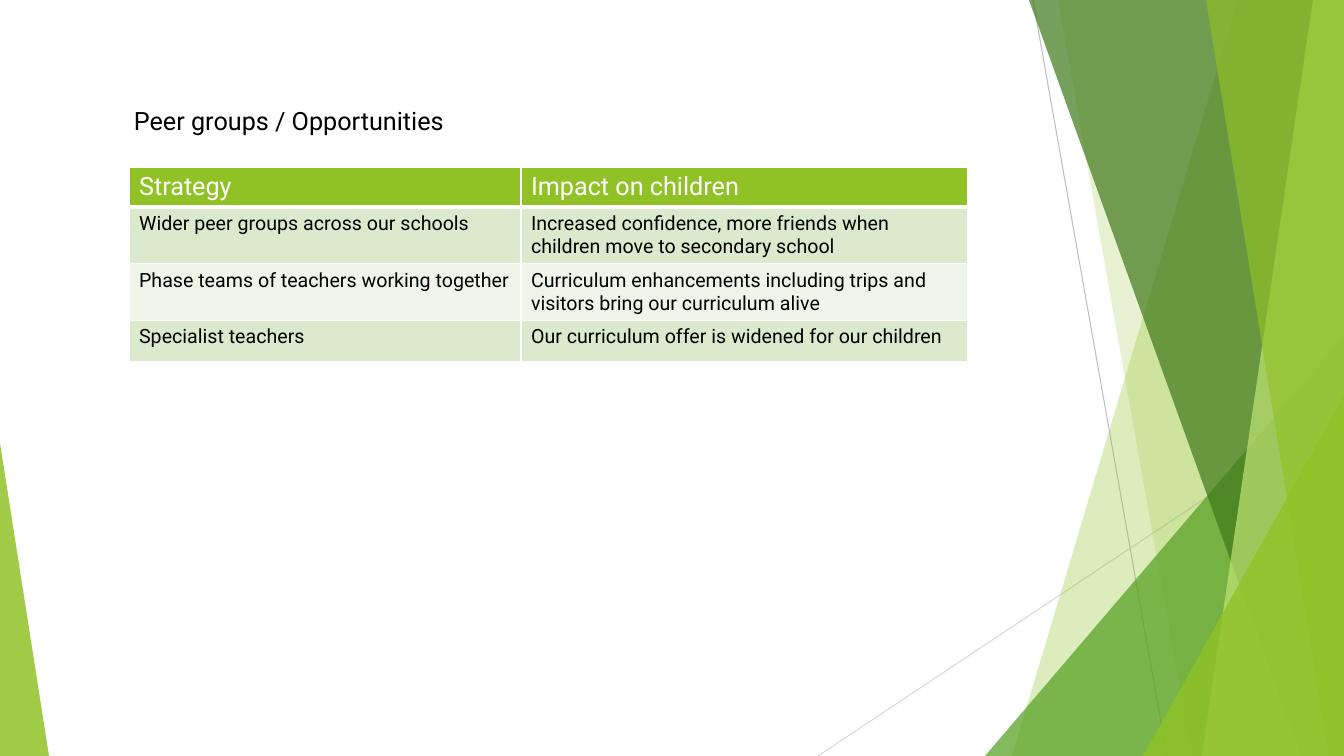
from lxml import etree
from pptx import Presentation
from pptx.dml.color import RGBColor
from pptx.enum.shapes import MSO_CONNECTOR, MSO_SHAPE
from pptx.oxml.ns import qn
from pptx.util import Pt

STRAIGHT = MSO_CONNECTOR.STRAIGHT
TRIANGLE = MSO_SHAPE.ISOSCELES_TRIANGLE

LIME = RGBColor(0x90, 0xC2, 0x26)
GREEN = RGBColor(0x54, 0xA0, 0x21)
FOREST = RGBColor(0x3F, 0x78, 0x19)
PALE = RGBColor(0xC0, 0xE4, 0x74)
MIST = RGBColor(0xDB, 0xE9, 0xCD)
FROST = RGBColor(0xEE, 0xF4, 0xE8)
SILVER = RGBColor(0xBF, 0xBF, 0xBF)
LIGHT = RGBColor(0xD9, 0xD9, 0xD9)
WHITE = RGBColor(0xFF, 0xFF, 0xFF)
BLACK = RGBColor(0, 0, 0)

FONT = "Roboto"
WIDE, HIGH = 1344, 756
TITLE = "Peer groups / Opportunities"
TITLE_BOX = (124, 100, 537, 40)
ROWS = [
    ("Strategy", "Impact on children"),
    ("Wider peer groups across our schools",
     "Increased confidence, more friends when children move to secondary school"),
    ("Phase teams of teachers working together",
     "Curriculum enhancements including trips and visitors bring our curriculum alive"),
    ("Specialist teachers", "Our curriculum offer is widened for our children"),
]
TABLE_LEFT, TABLE_TOP = 129, 167
COL_WIDTHS = (392, 447)
ROW_HEIGHTS = (39, 57, 56, 41)

# start x, start y, end x, end y, colour
RULES = [(1033, 0, 1167, HIGH, SILVER), (WIDE, 406, 818, HIGH, LIGHT)]
# Back to front. Band: top x, bottom x, colour, opacity (reaches the right edge).
# Wedge: left, top, width, apex position, colour, opacity (reaches the bottom edge).
FACETS = [
    ("band", 1238, 1012, LIME, 30),
    ("band", 1058, 1192, LIME, 20),
    ("wedge", 985, 336, 359, 1, GREEN, 72),
    ("band", 1029, 1301, FOREST, 70),
    ("band", 1313, 1202, PALE, 70),
    ("band", 1206, 1329, LIME, 65),
    ("wedge", 1143, 396, 201, 1, LIME, 80),
    ("wedge", 0, 443, 49, 0, LIME, 85),
]

SCALE = 914400 / 100.8


def px(value):
    return round(value * SCALE)


def paint(shape, color, alpha):
    """Fill a shape with a see-through colour, without line or shadow."""
    shape.shadow.inherit = False
    shape.line.fill.background()
    shape.fill.solid()
    shape.fill.fore_color.rgb = color
    tint = shape.fill._xPr.find(qn("a:solidFill"))[0]
    etree.SubElement(tint, qn("a:alpha"), val=str(alpha * 1000))


def add_rule(slide, x1, y1, x2, y2, color):
    rule = slide.shapes.add_connector(STRAIGHT, px(x1), px(y1), px(x2), px(y2))
    rule.line.color.rgb = color
    rule.line.width = Pt(0.75)
    etree.SubElement(rule._element.spPr, qn("a:effectLst"))


def add_band(slide, top_x, foot_x, color, alpha):
    pen = slide.shapes.build_freeform(top_x, 0, scale=SCALE)
    pen.add_line_segments([(WIDE, 0), (WIDE, HIGH), (foot_x, HIGH)], close=True)
    paint(pen.convert_to_shape(), color, alpha)


def add_wedge(slide, left, top, width, apex, color, alpha):
    wedge = slide.shapes.add_shape(
        TRIANGLE, px(left), px(top), px(width), px(HIGH - top))
    wedge.adjustments[0] = apex
    paint(wedge, color, alpha)


def write(frame, text, size, color):
    frame.text = text
    font = frame.paragraphs[0].font
    font.name, font.size, font.bold = FONT, Pt(size), False
    font.color.rgb = color


def edge(cell, foot):
    """Give a cell white borders; foot is the bottom width in points."""
    props = cell._tc.get_or_add_tcPr()
    for place, (side, width) in enumerate(
            [("lnL", 1), ("lnR", 1), ("lnT", 1), ("lnB", foot)]):
        line = etree.Element(qn("a:" + side), w=str(Pt(width)))
        fill = etree.SubElement(line, qn("a:solidFill"))
        etree.SubElement(fill, qn("a:srgbClr"), val=str(WHITE))
        props.insert(place, line)


def add_grid(slide):
    grid = slide.shapes.add_table(
        len(ROWS), len(COL_WIDTHS), px(TABLE_LEFT), px(TABLE_TOP),
        px(sum(COL_WIDTHS)), px(sum(ROW_HEIGHTS))).table
    for col, width in zip(grid.columns, COL_WIDTHS):
        col.width = px(width)
    for r, (texts, height) in enumerate(zip(ROWS, ROW_HEIGHTS)):
        grid.rows[r].height = px(height)
        head = r == 0
        fill = LIME if head else (FROST, MIST)[r % 2]
        for c, text in enumerate(texts):
            cell = grid.cell(r, c)
            write(cell.text_frame, text, 18 if head else 14,
                  WHITE if head else BLACK)
            cell.fill.solid()
            cell.fill.fore_color.rgb = fill
            edge(cell, 3 if head else 1)


def main():
    deck = Presentation()
    deck.slide_width, deck.slide_height = px(WIDE), px(HIGH)
    slide = deck.slides.add_slide(deck.slide_layouts[6])
    for rule in RULES:
        add_rule(slide, *rule)
    draw = {"band": add_band, "wedge": add_wedge}
    for kind, *facet in FACETS:
        draw[kind](slide, *facet)
    add_grid(slide)
    title = slide.shapes.add_textbox(*map(px, TITLE_BOX)).text_frame
    title.word_wrap = True
    write(title, TITLE, 18, BLACK)
    deck.save("out.pptx")


if __name__ == "__main__":
    main()
